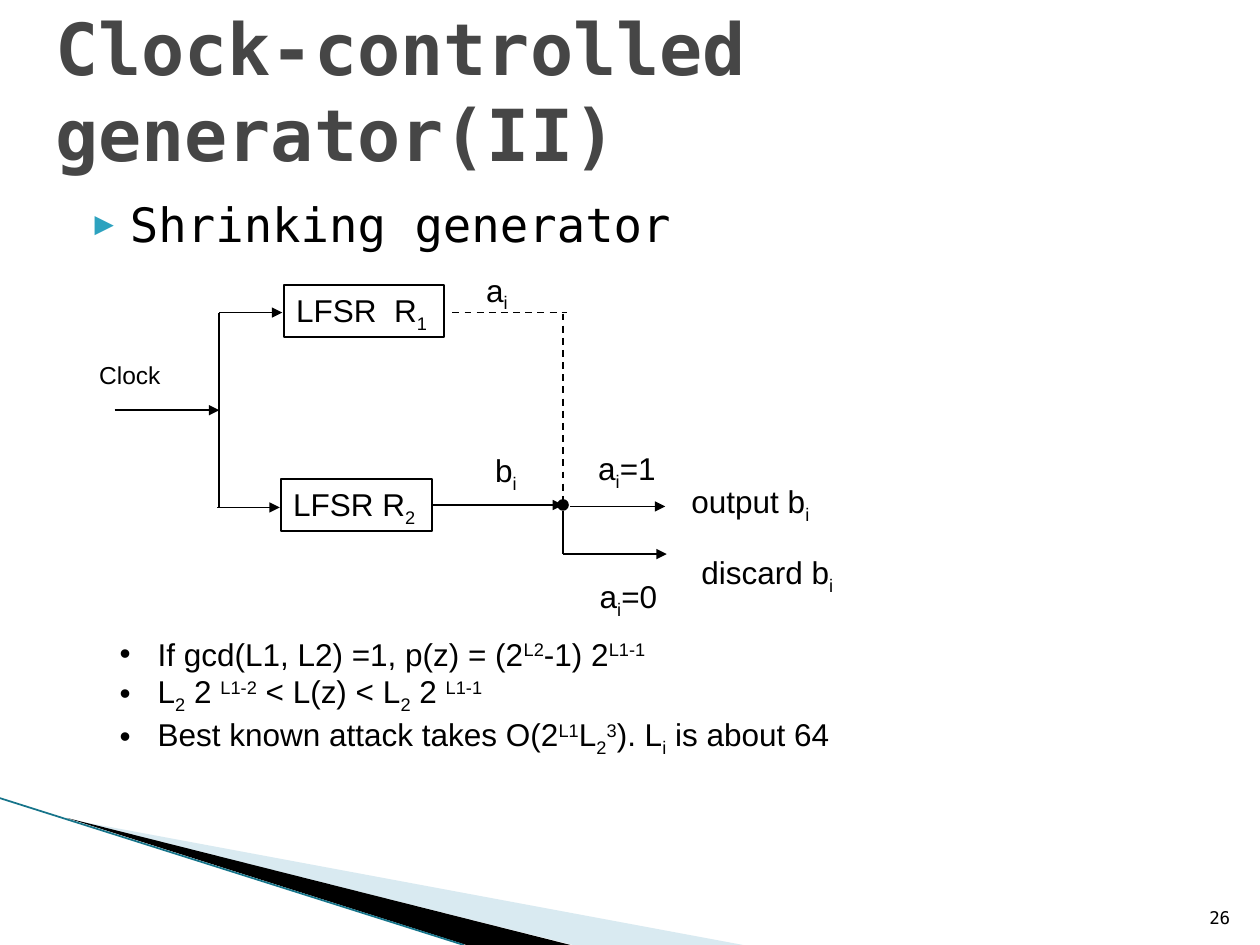
from lxml.etree import SubElement
from pptx import Presentation
from pptx.dml.color import RGBColor
from pptx.enum.dml import MSO_LINE
from pptx.enum.shapes import MSO_CONNECTOR, MSO_SHAPE
from pptx.enum.text import MSO_ANCHOR, PP_ALIGN
from pptx.oxml.ns import qn
from pptx.util import Cm, Pt

MONO = "DejaVu Sans Mono"
rgb = RGBColor.from_string


def write(p, text, size, font="Arial", color="000000", bold=False):
    """Fill a paragraph; '|' splits runs, '_' lowers a run and '^' raises it."""
    for part in text.split("|"):
        r = p.add_run()
        r.text = part.lstrip("_^")
        r.font.size, r.font.name, r.font.bold = Pt(size), font, bold
        r.font.color.rgb = rgb(color)
        if part[0] in "_^":
            r.font._element.set("baseline", "-25000" if part[0] == "_" else "30000")


def line(x1, y1, x2, y2, arrow=False, dash=False, color="000000"):
    c = s.shapes.add_connector(MSO_CONNECTOR.STRAIGHT, Cm(x1), Cm(y1), Cm(x2), Cm(y2))
    c.line.color.rgb = rgb(color)
    c.line.width = Pt(1)
    if dash:
        c.line.dash_style = MSO_LINE.DASH
    if arrow:
        SubElement(c.line._get_or_add_ln(), qn("a:tailEnd"), type="triangle")
    SubElement(c._element.spPr, qn("a:effectLst"))


prs = Presentation()
prs.slide_width, prs.slide_height = Cm(25.4), Cm(19.05)
s = prs.slides.add_slide(prs.slide_layouts[6])

# Corner decoration
wedges = [
    ("A0CBDC", 40, [(1.4, 16.52), (14.98, 19.05), (11.55, 19.05)]),
    ("000000", 100, [(1.35, 16.49), (11.5, 19.05), (9.4, 19.05)]),
]
for color, alpha, points in wedges:
    (x, y), *rest = [(Cm(px), Cm(py)) for px, py in points]
    fb = s.shapes.build_freeform(x, y)
    fb.add_line_segments(rest)
    sp = fb.convert_to_shape()
    sp.shadow.inherit = False
    sp.fill.solid()
    sp.fill.fore_color.rgb = rgb(color)
    sp.line.fill.background()
    clr = sp._element.spPr.find(qn("a:solidFill"))[0]
    SubElement(clr, qn("a:alpha"), val=str(alpha * 1000))
line(0, 16.09, 9.35, 19.05, color="16748A")

# Title, page number, heading and findings
title = "Clock-controlled generator(II)"
findings = [
    "If gcd(L1, L2) =1, p(z) = (2|^L2|-1) 2|^L1-1",
    "L|_2| 2 |^L1-2| < L(z) < L|_2| 2 |^L1-1",
    "Best known attack takes O(2|^L1|L|_2|^3|). L|_i| is about 64",
]
# box, anchor, alignment, paragraphs, style, bullet (sign, colour, percent, indent)
blocks = [
    ((0.86, 0, 21.49, 3.61), MSO_ANCHOR.MIDDLE, PP_ALIGN.LEFT, [title],
     (41, MONO, "464646", True), None),
    ((24.03, 17.81, 1.02, 1.02), MSO_ANCHOR.BOTTOM, PP_ALIGN.RIGHT, ["26"],
     (10, MONO), None),
    ((1.35, 3.81, 21.21, 2.4), MSO_ANCHOR.TOP, PP_ALIGN.LEFT, ["Shrinking generator"],
     (27, MONO), ("▶", "2DA2BF", 68, 1.02, 0.71)),
    ((2.16, 12.67, 19.66, 2.54), MSO_ANCHOR.TOP, PP_ALIGN.LEFT, findings,
     (18,), ("•", "000000", 100, 0.77, 0.77)),
]
for box, anchor, align, texts, style, bullet in blocks:
    tf = s.shapes.add_textbox(*map(Cm, box)).text_frame
    tf.word_wrap = True
    tf.vertical_anchor = anchor
    for i, text in enumerate(texts):
        p = tf.add_paragraph() if i else tf.paragraphs[0]
        p.alignment = align
        if bullet:
            char, color, percent, margin, hang = bullet
            pPr = p._p.get_or_add_pPr()
            pPr.set("marL", str(Cm(margin)))
            pPr.set("indent", str(-Cm(hang)))
            SubElement(SubElement(pPr, qn("a:buClr")), qn("a:srgbClr"), val=color)
            SubElement(pPr, qn("a:buSzPct"), val=str(percent * 1000))
            SubElement(pPr, qn("a:buFont"), typeface=style[1] if style[1:] else "Arial")
            SubElement(pPr, qn("a:buChar"), char=char)
        write(p, text, *style)

# Shift registers
for x, y, w, text in [(5.72, 5.74, 3.23, "LFSR  R|_1"), (5.66, 9.65, 3.05, "LFSR R|_2")]:
    sp = s.shapes.add_shape(MSO_SHAPE.RECTANGLE, Cm(x), Cm(y), Cm(w), Cm(1.05))
    sp.shadow.inherit = False
    sp.fill.background()
    sp.line.color.rgb = rgb("000000")
    sp.line.width = Pt(1)
    tf = sp.text_frame
    tf.word_wrap = False
    tf.vertical_anchor = MSO_ANCHOR.TOP
    tf.paragraphs[0].alignment = PP_ALIGN.LEFT
    write(tf.paragraphs[0], text, 18)

# Clock input and its branches
line(2.31, 8.27, 4.42, 8.27, arrow=True)
line(4.42, 6.3, 4.42, 10.24)
line(4.42, 6.3, 5.69, 6.3, arrow=True)
line(4.38, 10.23, 5.64, 10.23, arrow=True)

# Control path from R1, data path from R2, and the two outcomes
line(9.12, 6.3, 11.43, 6.3, dash=True)
line(11.35, 6.32, 11.35, 10.11, dash=True)
line(8.71, 10.18, 11.35, 10.18, arrow=True)
line(11.5, 10.21, 13.41, 10.21, arrow=True)
line(11.35, 10.31, 11.35, 11.17)
line(11.35, 11.17, 13.44, 11.17, arrow=True)

# Junction
sp = s.shapes.add_shape(MSO_SHAPE.FLOWCHART_CONNECTOR, Cm(11.25), Cm(10.08), Cm(0.2), Cm(0.2))
sp.shadow.inherit = False
sp.fill.solid()
sp.fill.fore_color.rgb = rgb("000000")
sp.line.color.rgb = rgb("000000")
sp.line.width = Pt(1)

# Diagram labels
labels = [
    (1.75, 7.14, 1.75, "Clock", 14),
    (9.55, 5.33, 0.97, "a|_i", 18),
    (9.73, 8.97, 0.97, "b|_i", 18),
    (11.81, 8.92, 1.68, "a|_i|=1", 18),
    (11.84, 11.51, 1.68, "a|_i|=0", 18),
    (13.69, 9.6, 2.9, "output b|_i", 18),
    (13.89, 11.02, 3.18, "discard b|_i", 18),
]
for x, y, w, text, size in labels:
    tf = s.shapes.add_textbox(Cm(x), Cm(y), Cm(w), Cm(1.02)).text_frame
    tf.word_wrap = False
    write(tf.paragraphs[0], text, size)

prs.save("out.pptx")
